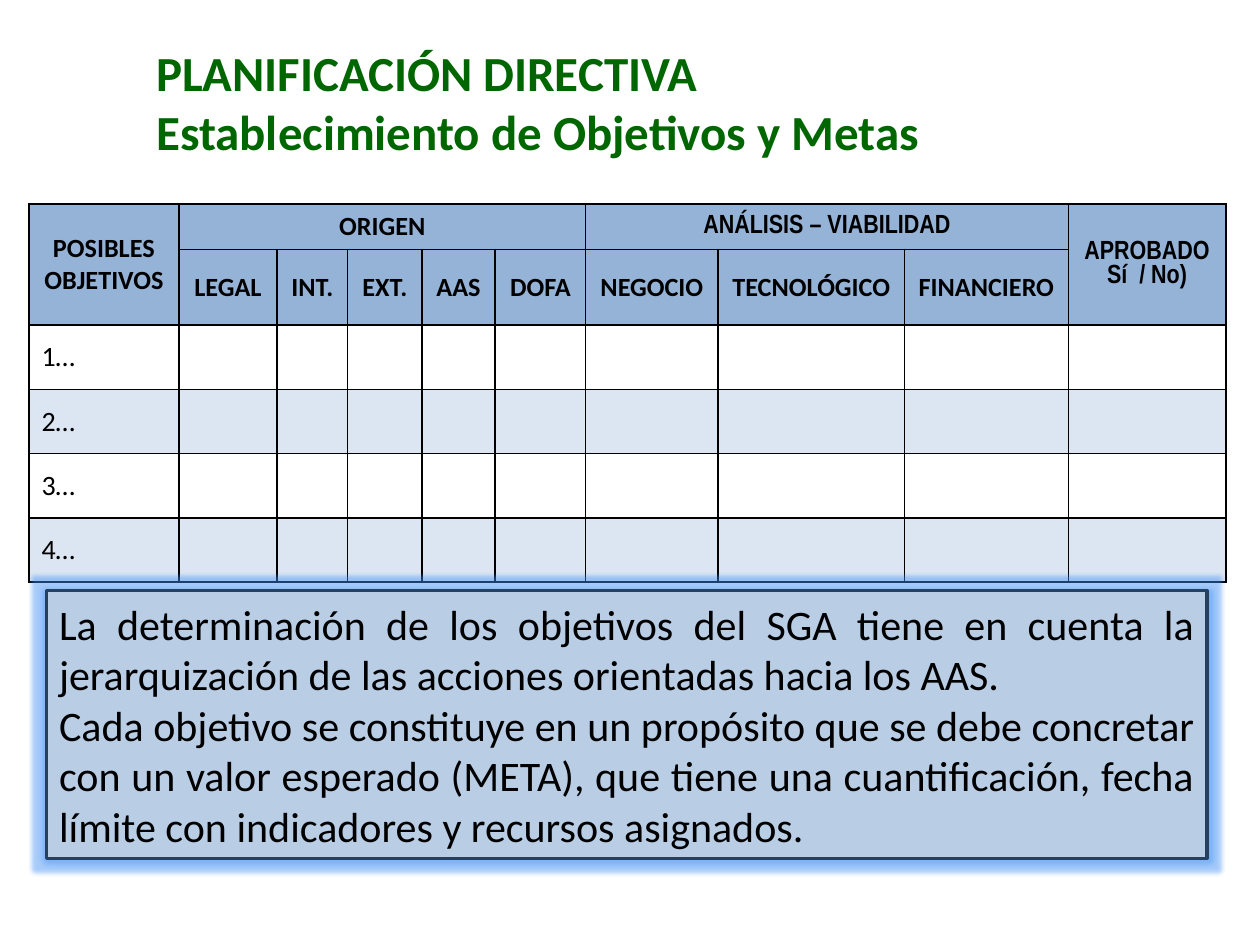
from dataclasses import dataclass

from lxml import etree
from pptx import Presentation
from pptx.dml.color import RGBColor
from pptx.enum.shapes import MSO_SHAPE
from pptx.enum.text import MSO_ANCHOR, PP_ALIGN
from pptx.oxml.ns import qn
from pptx.util import Inches, Pt

RECT = MSO_SHAPE.RECTANGLE
TOP, MIDDLE = MSO_ANCHOR.TOP, MSO_ANCHOR.MIDDLE
LEFT, CENTER, JUSTIFY = PP_ALIGN.LEFT, PP_ALIGN.CENTER, PP_ALIGN.JUSTIFY
TITLE_ONLY = 5


@dataclass(frozen=True)
class Theme:
    font: str = "Calibri"
    narrow: str = "Arial Narrow"
    black: str = "000000"
    green: str = "006600"
    head: str = "95B3D7"
    bands: tuple = ("FFFFFF", "DCE6F2")
    note: str = "B9CDE5"
    edge: str = "254061"
    glow: str = "3F8FF5"
    title_size: int = 28
    head_size: int = 15
    row_size: int = 16
    note_size: int = 24


THEME = Theme()
WIDTH, HEIGHT = 10, 7.5

COLS = (1.19, 0.78, 0.56, 0.59, 0.58, 0.72, 1.05, 1.48, 1.3, 1.25)
ROWS = (0.36, 0.6) + (0.51,) * 4
# Text, first row and column, last row and column, font
HEADS = [
    ("POSIBLES\nOBJETIVOS", 0, 0, 1, 0, THEME.font),
    ("ORIGEN", 0, 1, 0, 5, THEME.font),
    ("ANÁLISIS – VIABILIDAD", 0, 6, 0, 8, THEME.narrow),
    ("APROBADO\nSí  / No)", 0, 9, 1, 9, THEME.narrow),
]
SUBHEADS = ("LEGAL", "INT.", "EXT.", "AAS", "DOFA",
            "NEGOCIO", "TECNOLÓGICO", "FINANCIERO")
HEADS += [(text, 1, col, 1, col, THEME.font)
          for col, text in enumerate(SUBHEADS, 1)]
GOALS = ("1…", "2…", "3…", "4…")

NOTE = (
    "La determinación de los objetivos del SGA tiene en cuenta la "
    "jerarquización de las acciones orientadas hacia los AAS.\n"
    "Cada objetivo se constituye en un propósito que se debe concretar "
    "con un valor esperado (META), que tiene una cuantificación, fecha "
    "límite con indicadores y recursos asignados."
)


def rgb(code):
    return RGBColor.from_string(code)


def write(frame, text, size, color, align, bold=False, font=THEME.font):
    frame.text = text
    for para in frame.paragraphs:
        para.alignment = align
        para.line_spacing = 1.0
        para.space_before = Pt(0)
        for run in para.runs:
            run.font.name = font
            run.font.size = Pt(size)
            run.font.bold = bold
            run.font.color.rgb = rgb(color)


def paint(cell, color):
    """Give a cell its fill and thin black borders."""
    props = cell._tc.get_or_add_tcPr()
    for side in ("a:lnL", "a:lnR", "a:lnT", "a:lnB"):
        line = etree.SubElement(props, qn(side), w=str(Pt(1)))
        fill = etree.SubElement(line, qn("a:solidFill"))
        etree.SubElement(fill, qn("a:srgbClr"), val=THEME.black)
    cell.fill.solid()
    cell.fill.fore_color.rgb = rgb(color)
    cell.vertical_anchor = MIDDLE


def add_title(slide, box):
    title = slide.shapes.title
    title.left, title.top, title.width, title.height = box
    frame = title.text_frame
    frame.word_wrap = True
    frame.vertical_anchor = TOP
    write(frame, "PLANIFICACIÓN DIRECTIVA\nEstablecimiento de Objetivos y Metas",
          THEME.title_size, THEME.green, LEFT, bold=True)


def add_grid(slide, box):
    width, height = box[2:]
    table = slide.shapes.add_table(len(ROWS), len(COLS), *box).table
    for col, share in zip(table.columns, COLS):
        col.width = int(width * share / sum(COLS))
    for row, share in zip(table.rows, ROWS):
        row.height = int(height * share / sum(ROWS))

    # Fills and borders
    for r in range(len(ROWS)):
        for c in range(len(COLS)):
            paint(table.cell(r, c), THEME.head if r < 2 else THEME.bands[r % 2])

    # Headings
    for text, r, c, last_r, last_c, font in HEADS:
        cell = table.cell(r, c)
        if (r, c) != (last_r, last_c):
            cell.merge(table.cell(last_r, last_c))
        cell.margin_left = cell.margin_right = Inches(0.05)
        cell.margin_top = cell.margin_bottom = Inches(0.03)
        write(cell.text_frame, text, THEME.head_size, THEME.black, CENTER,
              True, font)

    # Goals
    for r, text in enumerate(GOALS, 2):
        write(table.cell(r, 0).text_frame, text, THEME.row_size,
              THEME.black, LEFT)


def add_note(slide, box):
    note = slide.shapes.add_shape(RECT, *box)
    note.fill.solid()
    note.fill.fore_color.rgb = rgb(THEME.note)
    note.line.color.rgb = rgb(THEME.edge)
    note.line.width = Pt(1.75)

    # Soft glow in place of the shadow
    note.shadow.inherit = False
    effects = note._element.spPr.find(qn("a:effectLst"))
    glow = etree.SubElement(effects, qn("a:glow"), rad=str(Pt(5)))
    color = etree.SubElement(glow, qn("a:srgbClr"), val=THEME.glow)
    etree.SubElement(color, qn("a:alpha"), val="45000")

    frame = note.text_frame
    frame.word_wrap = True
    frame.vertical_anchor = MIDDLE
    write(frame, NOTE, THEME.note_size, THEME.black, JUSTIFY)


def main():
    deck = Presentation()
    deck.slide_width, deck.slide_height = Inches(WIDTH), Inches(HEIGHT)
    slide = deck.slides.add_slide(deck.slide_layouts[TITLE_ONLY])

    def area(left, top, width, height):
        return [Inches(part) for part in (left, top, width, height)]

    add_title(slide, area(1.14, 0.29, 0.86 * WIDTH, 1.04))
    add_grid(slide, area(0.23, 1.62, sum(COLS), sum(ROWS)))
    add_note(slide, area(0.37, 4.69, 9.21, 2.12))
    deck.save("out.pptx")


if __name__ == "__main__":
    main()
